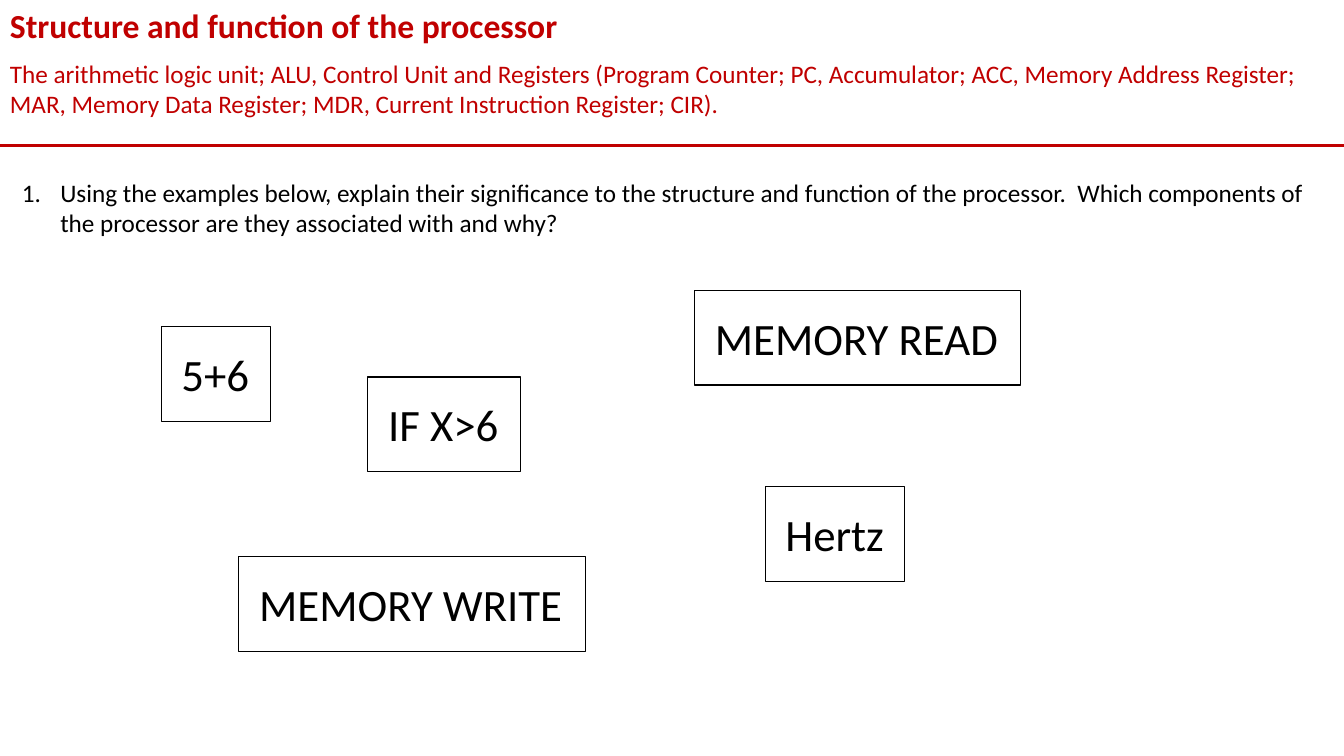
"""Build a slide asking how five examples relate to the parts of the processor."""
from lxml import etree
from pptx import Presentation
from pptx.dml.color import RGBColor
from pptx.enum.shapes import MSO_CONNECTOR, MSO_SHAPE
from pptx.enum.text import MSO_ANCHOR, MSO_AUTO_SIZE, PP_ALIGN
from pptx.oxml.ns import qn
from pptx.util import Inches, Pt

STRAIGHT = MSO_CONNECTOR.STRAIGHT
RECTANGLE = MSO_SHAPE.RECTANGLE
TOP = MSO_ANCHOR.TOP
LEFT = PP_ALIGN.LEFT
GROW = MSO_AUTO_SIZE.SHAPE_TO_FIT_TEXT

RED = RGBColor(0xC0, 0x00, 0x00)
BLACK = RGBColor(0x00, 0x00, 0x00)
FONT = "Calibri"

SLIDE_WIDTH = Inches(13.33)
SLIDE_HEIGHT = Inches(7.5)

TITLE = "Structure and function of the processor"
TOPIC = (
    "The arithmetic logic unit; ALU, Control Unit and Registers (Program Counter; PC, "
    "Accumulator; ACC, Memory Address Register; MAR, Memory Data Register; MDR, "
    "Current Instruction Register; CIR)."
)
QUESTION = (
    "Using the examples below, explain their significance to the structure and function "
    "of the processor.  Which components of the processor are they associated with and why?"
)

# Places are percentages of the slide: left, top, width, height.
TITLE_PLACE = (0, 0, 100, 6.67)
TOPIC_PLACE = (0, 7.07, 100, 9.47)
QUESTION_PLACE = (0.9, 22.8, 97.07, 9.47)
RULE_TOP = 19.2
EXAMPLE_HEIGHT = 12.53
EXAMPLES = [
    ("5+6", 12, 43.2, 8.1),
    ("IF X>6", 27.38, 49.87, 11.33),
    ("MEMORY READ", 51.69, 38.4, 24.23),
    ("MEMORY WRITE", 17.78, 73.6, 25.81),
    ("Hertz", 56.94, 64.4, 10.35),
]
EXAMPLE_MARGIN = Inches(0.2)
NUMBER_INDENT = Inches(0.38)


def across(share):
    return round(SLIDE_WIDTH * share / 100)


def down(share):
    return round(SLIDE_HEIGHT * share / 100)


def to_lengths(place):
    left, top, width, height = place
    return across(left), down(top), across(width), down(height)


def write(shape, text, size, color, bold=False, wrap=True):
    frame = shape.text_frame
    frame.text = text
    frame.word_wrap = wrap
    frame.auto_size = GROW
    frame.vertical_anchor = TOP
    paragraph = frame.paragraphs[0]
    paragraph.alignment = LEFT
    font = paragraph.runs[0].font
    font.name = FONT
    font.size = Pt(size)
    font.bold = bold
    font.color.rgb = color
    return paragraph


def add_text(slide, place, text, size, color, bold=False):
    box = slide.shapes.add_textbox(*to_lengths(place))
    return write(box, text, size, color, bold)


def add_number(paragraph):
    properties = paragraph._p.get_or_add_pPr()
    properties.set("marL", str(NUMBER_INDENT))
    properties.set("indent", str(-NUMBER_INDENT))
    etree.SubElement(properties, qn("a:buFont"), typeface="+mj-lt")
    etree.SubElement(properties, qn("a:buAutoNum"), type="arabicPeriod")


def add_rule(slide):
    height = down(RULE_TOP)
    rule = slide.shapes.add_connector(STRAIGHT, 0, height, SLIDE_WIDTH, height)
    rule.line.color.rgb = RED
    rule.line.width = Pt(2.25)
    etree.SubElement(rule._element.spPr, qn("a:effectLst"))


def add_example(slide, text, left, top, width):
    place = (left, top, width, EXAMPLE_HEIGHT)
    shape = slide.shapes.add_shape(RECTANGLE, *to_lengths(place))
    shape.shadow.inherit = False
    shape.fill.background()
    shape.line.color.rgb = BLACK
    shape.line.width = Pt(0.75)
    frame = shape.text_frame
    frame.margin_left = frame.margin_right = EXAMPLE_MARGIN
    frame.margin_top = frame.margin_bottom = EXAMPLE_MARGIN
    write(shape, text, 32, BLACK, wrap=False)


def main():
    presentation = Presentation()
    presentation.slide_width = SLIDE_WIDTH
    presentation.slide_height = SLIDE_HEIGHT
    slide = presentation.slides.add_slide(presentation.slide_layouts[6])
    add_rule(slide)
    add_text(slide, TOPIC_PLACE, TOPIC, 18, RED)
    add_text(slide, TITLE_PLACE, TITLE, 24, RED, bold=True)
    add_number(add_text(slide, QUESTION_PLACE, QUESTION, 18, BLACK))
    for example in EXAMPLES:
        add_example(slide, *example)
    presentation.save("out.pptx")


if __name__ == "__main__":
    main()
